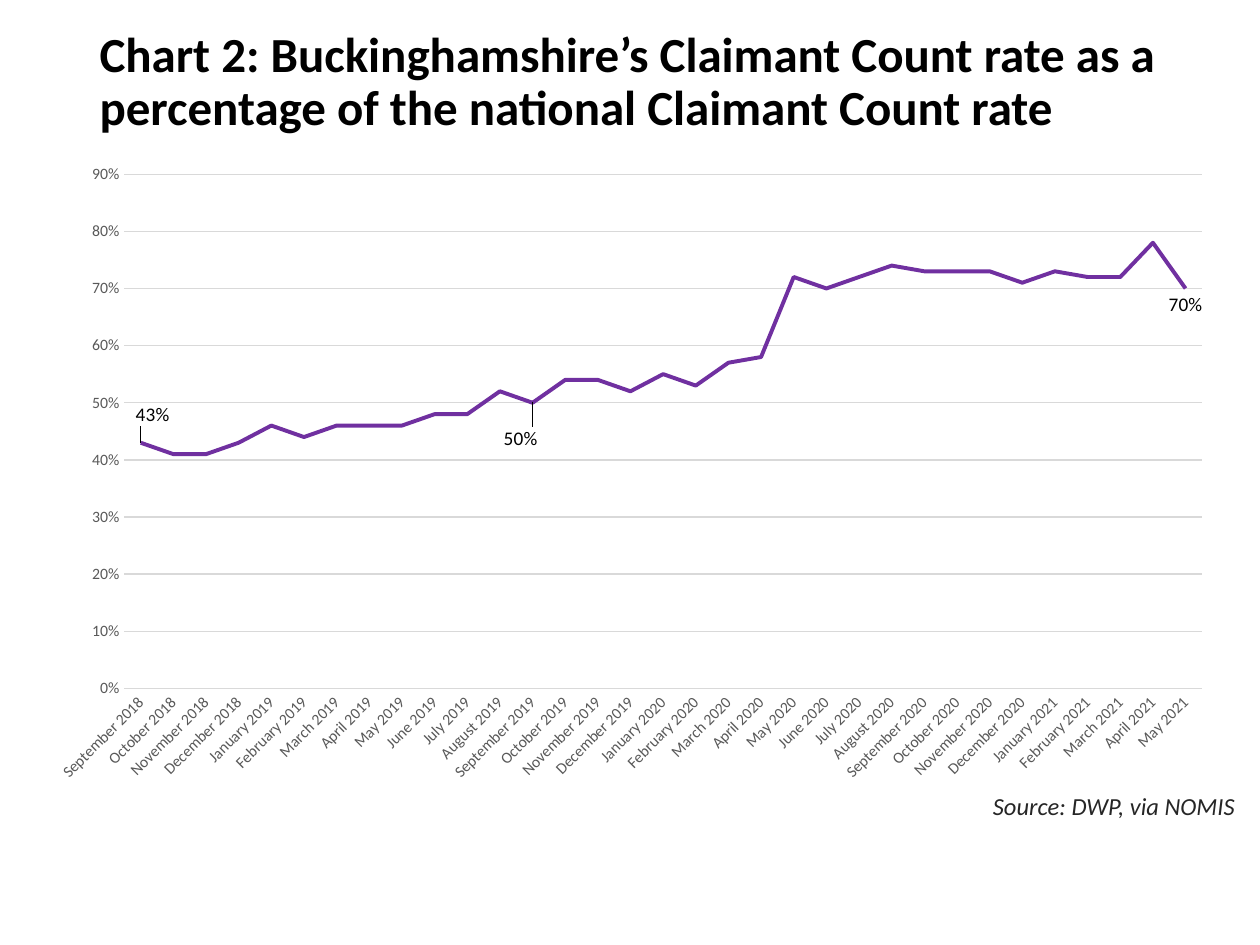
import pptx
import pptx.chart.data
import pptx.dml.color
import pptx.enum.chart
import pptx.enum.text
import pptx.oxml
import pptx.oxml.ns
import pptx.util

Pt = pptx.util.Pt
RGB = pptx.dml.color.RGBColor.from_string
XL = pptx.enum.chart

THEME = {
    "font": "Calibri",
    "line": "7030A0", "grid": "D9D9D9",
    "title": {"size": 28, "color": "000000", "bold": True},
    "source": {"size": 14, "color": "262626", "italic": True},
    "axis": {"size": 9, "color": "595959"},
    "label": {"size": 11, "color": "000000"},
    "chart": {"size": 10, "color": "000000"},
}

TITLE = ("Chart 2: Buckinghamshire’s Claimant Count rate as a "
         "percentage of the national Claimant Count rate")
SOURCE = "Source: DWP, via NOMIS"
MONTHS = ["January", "February", "March", "April", "May", "June", "July",
          "August", "September", "October", "November", "December"]
FIRST_MONTH, FIRST_YEAR = 8, 2018  # September 2018
RATES = [43, 41, 41, 43, 46, 44, 46, 46, 46, 48, 48, 52, 50, 54, 54, 52, 55,
         53, 57, 58, 72, 70, 72, 74, 73, 73, 73, 71, 73, 72, 72, 78, 70]
# Labelled point: shift from its place below the line, as shares of the chart
LABELS = {0: (0.01, -0.07), 12: (-0.01, 0.03), 32: None}

# left, top, width, height
TITLE_BOX = (49.7, 10.8, 620.6, 73.4)
SOURCE_BOX = (541.4, 448.6, 171.4, 24.5)
CHART_BOX = (19.4, 87.1, 680.4, 366.5)
PLOT_BOX = {"x": 0.076, "y": 0.034, "w": 0.905, "h": 0.802}


def style_font(font, role):
    font.name = THEME["font"]
    for name, value in THEME[role].items():
        if name == "color":
            font.color.rgb = RGB(value)
        else:
            setattr(font, name, Pt(value) if name == "size" else value)


def fill_text(s, text, role, align, anchor):
    tf = s.text_frame
    tf.word_wrap = True
    tf.auto_size = pptx.enum.text.MSO_AUTO_SIZE.NONE
    tf.vertical_anchor = anchor
    p = tf.paragraphs[0]
    p.alignment = align
    r = p.add_run()
    r.text = text
    style_font(r.font, role)
    return p


def manual_layout(values, inner=False):
    target = '<c:layoutTarget val="inner"/>' if inner else ""
    modes = "".join(f'<c:{k}Mode val="edge"/>' for k in "xy") if inner else ""
    sizes = "".join(f'<c:{k} val="{v}"/>' for k, v in values.items())
    return pptx.oxml.parse_xml(
        f'<c:layout {pptx.oxml.ns.nsdecls("c")}><c:manualLayout>'
        f"{target}{modes}{sizes}</c:manualLayout></c:layout>")


def style_axis(axis):
    axis.major_tick_mark = axis.minor_tick_mark = XL.XL_TICK_MARK.NONE
    style_font(axis.tick_labels.font, "axis")


def style_line(line, color, width):
    line.color.rgb = RGB(color)
    line.width = Pt(width)


def add_rate_chart(slide):
    data = pptx.chart.data.CategoryChartData(number_format="0%")
    months = [divmod(FIRST_MONTH + i, 12) for i in range(len(RATES))]
    data.categories = [f"{MONTHS[m]} {FIRST_YEAR + y}" for y, m in months]
    data.add_series("Series 1", [rate / 100 for rate in RATES])
    chart = slide.shapes.add_chart(
        XL.XL_CHART_TYPE.LINE, *map(Pt, CHART_BOX), data).chart
    chart.has_legend = chart.has_title = False
    style_font(chart.font, "chart")

    cat, val = chart.category_axis, chart.value_axis
    for axis in (cat, val):
        style_axis(axis)
    style_line(cat.format.line, THEME["grid"], 0.75)
    cat.tick_labels.font  # text properties exist from here on
    cat._element.txPr.bodyPr.set("rot", "-2700000")
    val.format.line.fill.background()
    val.minimum_scale, val.maximum_scale, val.major_unit = 0, 0.9, 0.1
    val.tick_labels.number_format = "0%"
    val.tick_labels.number_format_is_linked = False
    style_line(val.major_gridlines.format.line, THEME["grid"], 0.75)

    plot_area = chart._chartSpace.chart.plotArea
    for old in plot_area.xpath("c:layout"):
        plot_area.remove(old)
    plot_area.insert(0, manual_layout(PLOT_BOX, inner=True))

    plot = chart.plots[0]
    plot.vary_by_categories = False
    series = plot.series[0]
    series.smooth = False
    series.marker.style = XL.XL_MARKER_STYLE.NONE
    style_line(series.format.line, THEME["line"], 2.25)
    series.data_labels.show_value = False
    for i, shift in LABELS.items():
        label = series.points[i].data_label
        style_font(label.font, "label")
        label.position = XL.XL_LABEL_POSITION.BELOW
        if shift:
            idx = series._element.xpath(f"c:dLbls/c:dLbl/c:idx[@val='{i}']")[0]
            idx.addnext(manual_layout(dict(zip("xy", shift))))


def main():
    prs = pptx.Presentation()
    prs.slide_width, prs.slide_height = Pt(720), Pt(540)
    slide = prs.slides.add_slide(prs.slide_layouts[5])
    align, anchor = pptx.enum.text.PP_ALIGN, pptx.enum.text.MSO_ANCHOR

    title = slide.shapes.title
    title.left, title.top, title.width, title.height = map(Pt, TITLE_BOX)
    p = fill_text(title, TITLE, "title", align.LEFT, anchor.MIDDLE)
    p.line_spacing = 0.9

    source = slide.shapes.add_textbox(*map(Pt, SOURCE_BOX))
    fill_text(source, SOURCE, "source", align.RIGHT, anchor.TOP)
    add_rate_chart(slide)
    prs.save("out.pptx")


if __name__ == "__main__":
    main()
